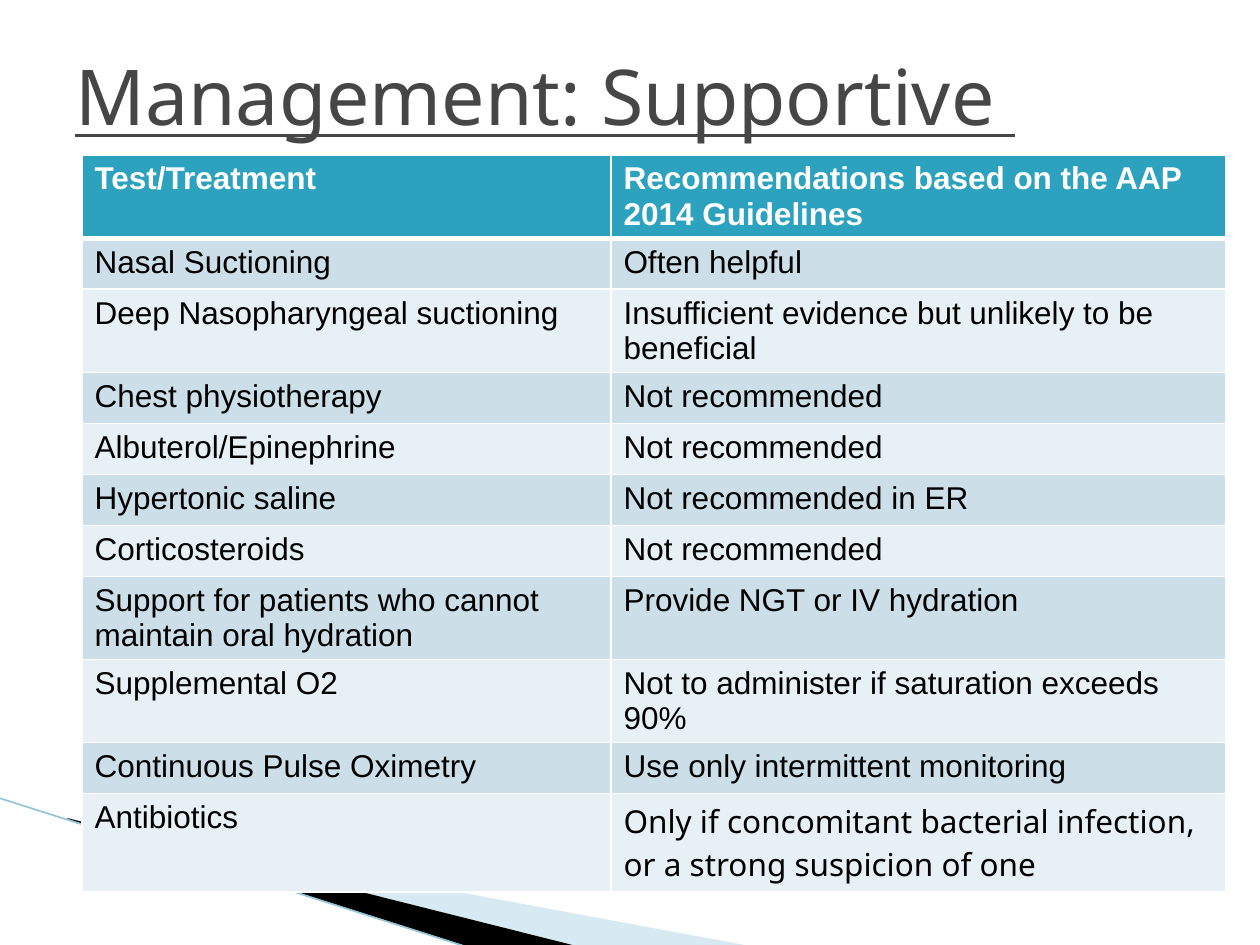
import pptx
import pptx.util
import pptx.dml.color
import pptx.enum.shapes
import pptx.enum.text
import pptx.oxml.ns
from lxml import etree

UNIT = 914400 / 126
HUES = {
    "title": "464646", "head": "2DA2BF", "odd": "CCDFE8", "even": "E7F0F4",
    "rule": "FFFFFF", "ink": "000000", "pale": "9CCADC", "edge": "93C5D8",
}
ROWS = [
    ("Test/Treatment", "Recommendations based on the AAP 2014 Guidelines"),
    ("Nasal Suctioning", "Often helpful"),
    ("Deep Nasopharyngeal suctioning", "Insufficient evidence but unlikely to be beneficial"),
    ("Chest physiotherapy", "Not recommended"),
    ("Albuterol/Epinephrine", "Not recommended"),
    ("Hypertonic saline", "Not recommended in ER"),
    ("Corticosteroids", "Not recommended"),
    ("Support for patients who cannot maintain oral hydration", "Provide NGT or IV hydration"),
    ("Supplemental O2", "Not to administer if saturation exceeds 90%"),
    ("Continuous Pulse Oximetry", "Use only intermittent monitoring"),
    ("Antibiotics", "Only if concomitant bacterial infection, or a strong suspicion of one"),
]


def px(n):
    return pptx.util.Emu(round(n * UNIT))


def hue(name):
    return pptx.dml.color.RGBColor.from_string(HUES[name])


def node(root, tag, **attrs):
    return etree.SubElement(root, pptx.oxml.ns.qn(tag), **attrs)


def write(frame, text, size=18, font="Arial", color="ink", bold=False, under=False):
    frame.word_wrap = True
    run = frame.paragraphs[0].add_run()
    run.text = text
    run.font.size = pptx.util.Pt(size)
    run.font.name = font
    run.font.color.rgb = hue(color)
    run.font.bold = bold
    run.font.underline = under


def wedge(slide, left, top, points, color, alpha=None):
    spots = [(left + x, top + y) for x, y in points]
    form = slide.shapes.build_freeform(*spots[0], scale=UNIT)
    form.add_line_segments(spots[1:], close=True)
    shape = form.convert_to_shape()
    shape.shadow.inherit = False
    shape.fill.solid()
    shape.fill.fore_color.rgb = hue(color)
    shape.line.fill.background()
    if alpha:
        tint = shape.fill._xPr.find(".//" + pptx.oxml.ns.qn("a:srgbClr"))
        node(tint, "a:alpha", val=str(alpha * 1000))


def swoosh(slide, left, top, width, height):
    wedge(slide, left, top, [(70, 22), (width, height), (576, height), (70, 21)], "pale", 40)
    wedge(slide, left, top, [(68, 20), (577, height), (470, height + 1), (69, 21)], "ink")
    line = slide.shapes.add_connector(
        pptx.enum.shapes.MSO_CONNECTOR.STRAIGHT,
        px(left), px(top), px(left + 468), px(top + height + 1))
    line.line.color.rgb = hue("edge")
    line.line.width = pptx.util.Pt(0.95)
    node(line._element.spPr, "a:effectLst")


def border(cell, row):
    props = cell._tc.get_or_add_tcPr()
    for side in "LRTB":
        thick = (row, side) in ((0, "B"), (1, "T"))
        line = node(props, "a:ln" + side, w=str(pptx.util.Pt(3 if thick else 1)))
        node(node(line, "a:solidFill"), "a:srgbClr", val=HUES["rule"])


def grid(slide, left, top, width, height):
    table = slide.shapes.add_table(
        len(ROWS), 2, px(left), px(top), px(width), px(height)).table
    split = 529
    table.columns[0].width = px(split)
    table.columns[1].width = px(width - split)
    for r, texts in enumerate(ROWS):
        table.rows[r].height = px(height / len(ROWS))
        for c, text in enumerate(texts):
            cell = table.cell(r, c)
            border(cell, r)
            cell.fill.solid()
            cell.fill.fore_color.rgb = hue("head" if r == 0 else "odd" if r % 2 else "even")
            last = (r, c) == (len(ROWS) - 1, 1)
            write(cell.text_frame, text, bold=r == 0,
                  color="rule" if r == 0 else "ink",
                  font="Noto Sans" if last else "Arial")


def title(slide, left, top, width, height):
    box = slide.shapes.add_textbox(px(left), px(top), px(width), px(height))
    box.text_frame.vertical_anchor = pptx.enum.text.MSO_ANCHOR.MIDDLE
    write(box.text_frame, "Management: Supportive ", size=44,
          font="Noto Sans", color="title", under=True)


def main():
    deck = pptx.Presentation()
    deck.slide_width, deck.slide_height = px(1260), px(945)
    slide = deck.slides.add_slide(deck.slide_layouts[6])
    swoosh(slide, -1, 798, 751, 148)
    grid(slide, 82, 155, 1144, 561)
    title(slide, 63, 16, 1134, 158)
    deck.save("out.pptx")


if __name__ == "__main__":
    main()
